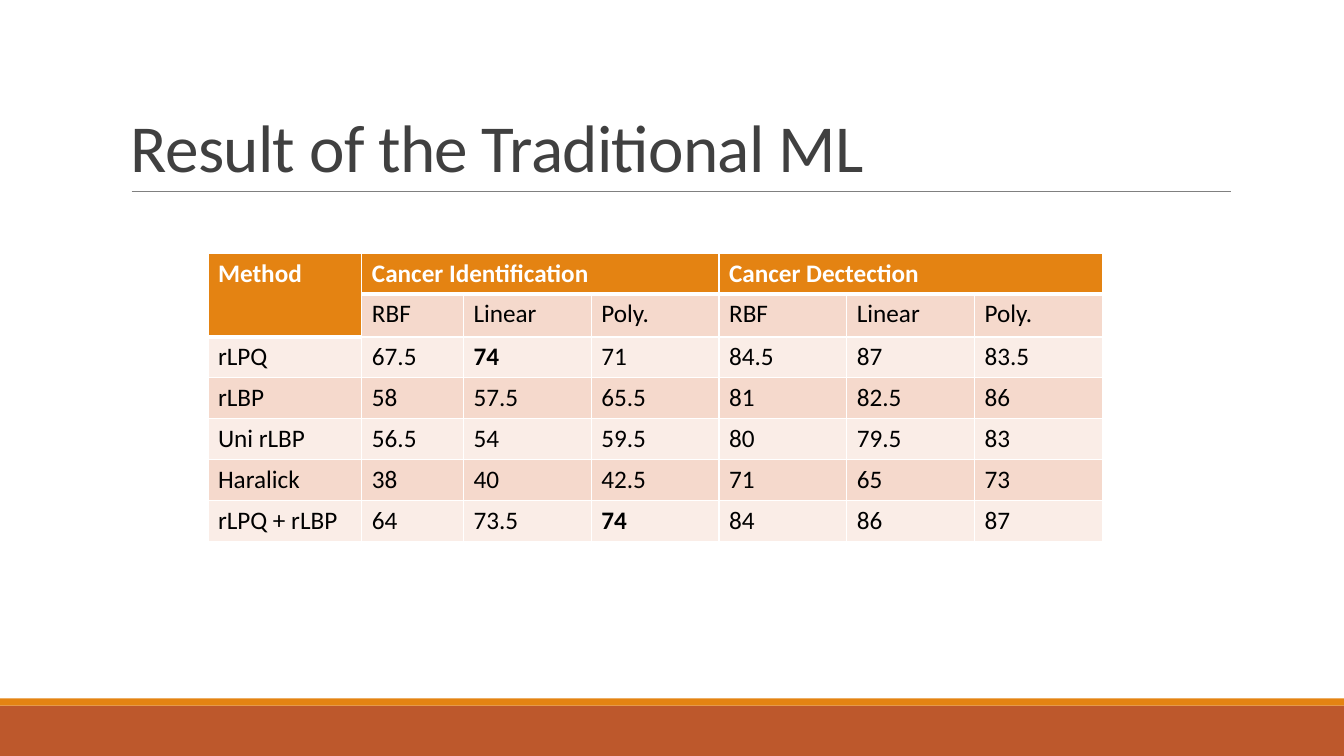
from lxml import etree
from pptx import Presentation
from pptx.dml.color import RGBColor
from pptx.enum.shapes import MSO_CONNECTOR, MSO_SHAPE
from pptx.enum.text import MSO_ANCHOR
from pptx.oxml.ns import qn
from pptx.util import Cm, Pt

RECT = MSO_SHAPE.RECTANGLE
STRAIGHT = MSO_CONNECTOR.STRAIGHT
BOTTOM = MSO_ANCHOR.BOTTOM

FONT = "Calibri"
COLORS = {
    "rust": "BD582C",
    "orange": "E48312",
    "rule": "808080",
    "title": "404040",
    "white": "FFFFFF",
    "black": "000000",
    "dark_band": "F5D9CC",
    "light_band": "FAEDE7",
}


def rgb(name):
    return RGBColor.from_string(COLORS[name])


def set_borders(cell, widths):
    """Give a cell white borders; widths are points for left, right, top, bottom."""
    tcPr = cell._tc.get_or_add_tcPr()
    for i, (side, width) in enumerate(zip("LRTB", widths)):
        ln = etree.Element(qn(f"a:ln{side}"), w=str(Pt(width)))
        fill = etree.SubElement(ln, qn("a:solidFill"))
        etree.SubElement(fill, qn("a:srgbClr"), val=COLORS["white"])
        tcPr.insert(i, ln)


prs = Presentation()
prs.slide_width = Cm(33.87)
prs.slide_height = Cm(19.05)
s = prs.slides.add_slide(prs.slide_layouts[6])

# Footer bands
for top, height, color in [(17.78, 1.27, "rust"), (17.6, 0.18, "orange")]:
    sp = s.shapes.add_shape(RECT, 0, Cm(top), prs.slide_width, Cm(height))
    sp.shadow.inherit = False
    sp.fill.solid()
    sp.fill.fore_color.rgb = rgb(color)
    sp.line.fill.background()

# Title and the rule below it
rule = s.shapes.add_connector(STRAIGHT, Cm(3.32), Cm(4.82), Cm(31.01), Cm(4.82))
rule.line.color.rgb = rgb("rule")
rule.line.width = Pt(0.5)
etree.SubElement(rule._element.spPr, qn("a:effectLst"))

title = s.shapes.add_textbox(Cm(3.05), Cm(0.79), Cm(27.94), Cm(4.03))
tf = title.text_frame
tf.word_wrap = True
tf.vertical_anchor = BOTTOM
tf.text = "Result of the Traditional ML"
p = tf.paragraphs[0]
p.line_spacing = 0.85
r = p.runs[0]
r.font.name = FONT
r.font.size = Pt(48)
r.font.color.rgb = rgb("title")
r._r.get_or_add_rPr().set("spc", "-50")

# Results table
ROWS = [
    ["Method", "Cancer Identification", "", "", "Cancer Dectection", "", ""],
    ["", "RBF", "Linear", "Poly.", "RBF", "Linear", "Poly."],
    ["rLPQ", "67.5", "74", "71", "84.5", "87", "83.5"],
    ["rLBP", "58", "57.5", "65.5", "81", "82.5", "86"],
    ["Uni rLBP", "56.5", "54", "59.5", "80", "79.5", "83"],
    ["Haralick", "38", "40", "42.5", "71", "65", "73"],
    ["rLPQ + rLBP", "64", "73.5", "74", "84", "86", "87"],
]
COL_WIDTHS = [3.88, 2.56] + [3.22] * 5
ROW_HEIGHTS = [1.02, 1.09] + [1.03] * 5
HEADERS = {(0, col) for col in range(len(COL_WIDTHS))} | {(1, 0)}
BEST = {(2, 2), (6, 3)}

table = s.shapes.add_table(
    len(ROWS), len(COL_WIDTHS), Cm(5.24), Cm(6.38),
    Cm(sum(COL_WIDTHS)), Cm(sum(ROW_HEIGHTS))).table
for column, width in zip(table.columns, COL_WIDTHS):
    column.width = Cm(width)
for row, height in zip(table.rows, ROW_HEIGHTS):
    row.height = Cm(height)

for i, values in enumerate(ROWS):
    for j, value in enumerate(values):
        cell = table.cell(i, j)
        is_header = (i, j) in HEADERS
        band = "dark_band" if i % 2 else "light_band"
        cell.fill.solid()
        cell.fill.fore_color.rgb = rgb("orange" if is_header else band)
        top = 3 if (i - 1, j) in HEADERS else 1
        set_borders(cell, [1, 1, top, 3 if is_header else 1])
        cell.text_frame.text = value
        for r in cell.text_frame.paragraphs[0].runs:
            r.font.name = FONT
            r.font.size = Pt(18)
            r.font.bold = is_header or (i, j) in BEST
            r.font.color.rgb = rgb("white" if is_header else "black")

for first, last in [((0, 0), (1, 0)), ((0, 1), (0, 3)), ((0, 4), (0, 6))]:
    table.cell(*first).merge(table.cell(*last))

prs.save("out.pptx")
